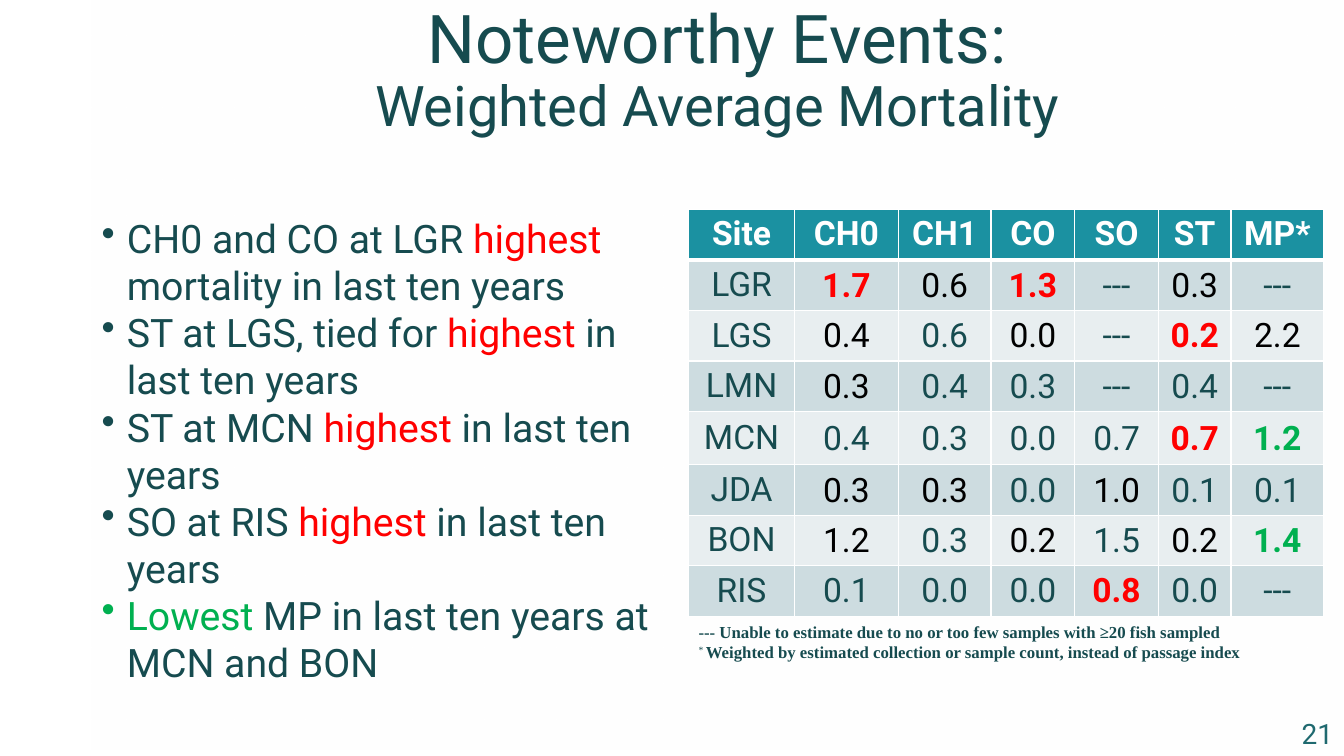
from dataclasses import dataclass

from lxml.etree import SubElement
from pptx import Presentation
from pptx.dml.color import RGBColor
from pptx.enum.shapes import MSO_SHAPE as Shape
from pptx.enum.text import MSO_ANCHOR as Anchor, PP_ALIGN as Align
from pptx.oxml import parse_xml
from pptx.oxml.ns import nsdecls, qn
from pptx.slide import Slide
from pptx.table import _Cell as Cell
from pptx.text.text import Font, TextFrame, _Paragraph as Paragraph
from pptx.util import Inches, Pt


@dataclass(frozen=True)
class Theme:
    """Colours, fonts and type sizes of the slide."""
    text: str = "164B4F"
    number: str = "1F696F"
    high: str = "FF0000"
    low: str = "00B050"
    black: str = "000000"
    white: str = "FFFFFF"
    header: str = "1B91A1"
    bands: tuple[str, str] = ("CDDCE0", "E8EEF0")
    font: str = "Roboto"
    note_font: str = "Times New Roman"
    title_size: int = 48
    subtitle_size: int = 40
    body_size: int = 28
    table_size: int = 24
    number_size: int = 20
    note_size: int = 12


@dataclass(frozen=True)
class Box:
    """Place and size in inches."""
    left: float
    top: float
    width: float
    height: float

    def lengths(self) -> tuple[Inches, ...]:
        """Return the four lengths for a shape call."""
        return tuple(map(Inches, (self.left, self.top, self.width, self.height)))


@dataclass(frozen=True)
class Bullet:
    """A bullet with one highlighted word."""
    before: str
    word: str
    after: str
    colour: str


@dataclass(frozen=True)
class SiteRow:
    """Values of one site, with one tone letter per value."""
    site: str
    values: str
    tones: str


THEME = Theme()
TONES = {"t": THEME.text, "k": THEME.black, "h": THEME.high, "l": THEME.low}
PANEL = Box(0.91, 0, 12.41, 7.5)
TITLE = Box(0.91, 0, 12.41, 1.42)
BODY = Box(0.91, 2.08, 5.92, 5.17)
TABLE = Box(6.83, 2.08, 6.31, 4.03)
NOTES = Box(6.83, 6.12, 6.31, 0.5)
NUMBER = Box(11.91, 7.07, 1.41, 0.4)
BULLETS = [
    Bullet("CH0 and CO at LGR ", "highest", " mortality in last ten years", THEME.high),
    Bullet("ST at LGS, tied for ", "highest", " in last ten years", THEME.high),
    Bullet("ST at MCN ", "highest", " in last ten years", THEME.high),
    Bullet("SO at RIS ", "highest", " in last ten years", THEME.high),
    Bullet("", "Lowest", " MP in last ten years at MCN and BON", THEME.low),
]
HEADINGS = "Site CH0 CH1 CO SO ST MP*".split()
SITES = [
    SiteRow("LGR", "1.7 0.6 1.3 --- 0.3 ---", "hkhtkt"),
    SiteRow("LGS", "0.4 0.6 0.0 --- 0.2 2.2", "ktkthk"),
    SiteRow("LMN", "0.3 0.4 0.3 --- 0.4 ---", "kttttt"),
    SiteRow("MCN", "0.4 0.3 0.0 0.7 0.7 1.2", "tttthl"),
    SiteRow("JDA", "0.3 0.3 0.0 1.0 0.1 0.1", "kktktt"),
    SiteRow("BON", "1.2 0.3 0.2 1.5 0.2 1.4", "ktktkl"),
    SiteRow("RIS", "0.1 0.0 0.0 0.8 0.0 ---", "ttthtt"),
]
COLUMN_WIDTHS = [1.05, 1.03, 0.92, 0.83, 0.83, 0.72, 0.92]
ROW_HEIGHTS = [0.45, 0.5, 0.5, 0.5, 0.53, 0.5, 0.5, 0.5]


def style(font: Font, size: int, colour: str = THEME.text,
          name: str = THEME.font, bold: bool = False) -> None:
    """Set the look of a font."""
    font.size, font.name, font.bold = Pt(size), name, bold
    font.color.rgb = RGBColor.from_string(colour)


def hang(paragraph: Paragraph, bullet: str = "") -> None:
    """Give a paragraph a hanging indent and an optional bullet."""
    properties = paragraph._p.get_or_add_pPr()
    properties.set("marL", str(Inches(0.25)))
    properties.set("indent", str(-Inches(0.25)))
    if bullet:
        SubElement(properties, qn("a:buChar"), char=bullet)


def add_text(slide: Slide, box: Box, anchor: Anchor = Anchor.TOP) -> TextFrame:
    """Add a wrapping text box and return its frame."""
    frame = slide.shapes.add_textbox(*box.lengths()).text_frame
    frame.word_wrap, frame.vertical_anchor = True, anchor
    return frame


def add_panel(slide: Slide) -> None:
    """Add the fading white panel behind the content."""
    panel = slide.shapes.add_shape(Shape.RECTANGLE, *PANEL.lengths())
    panel.shadow.inherit = False
    panel.line.fill.background()
    panel.fill.gradient()
    panel.fill.gradient_angle = 270
    for stop, alpha in zip(panel.fill.gradient_stops, (60000, 0)):
        stop.color.rgb = RGBColor.from_string(THEME.white)
    for colour, alpha in zip(panel._element.spPr.iter(qn("a:srgbClr")), (60000, 0)):
        SubElement(colour, qn("a:alpha"), val=str(alpha))


def add_title(slide: Slide) -> None:
    """Add the two-line title."""
    paragraph = add_text(slide, TITLE, Anchor.BOTTOM).paragraphs[0]
    paragraph.alignment, paragraph.line_spacing = Align.CENTER, 0.9
    heading = paragraph.add_run()
    heading.text = "Noteworthy Events:"
    style(heading.font, THEME.title_size)
    paragraph.add_line_break()
    subtitle = paragraph.add_run()
    subtitle.text = "Weighted Average Mortality"
    style(subtitle.font, THEME.subtitle_size)


def add_bullets(slide: Slide) -> None:
    """Add the list of events."""
    frame = add_text(slide, BODY)
    for index, bullet in enumerate(BULLETS):
        paragraph = frame.add_paragraph() if index else frame.paragraphs[0]
        hang(paragraph, "•")
        parts = ((bullet.before, THEME.text), (bullet.word, bullet.colour),
                 (bullet.after, THEME.text))
        for text, colour in parts:
            if text:
                run = paragraph.add_run()
                run.text = text
                style(run.font, THEME.body_size, colour)


def fill_cell(cell: Cell, text: str, colour: str, fill: str, bold: bool,
              top: int = 1, bottom: int = 1) -> None:
    """Write a centred cell with its fill and white borders."""
    paragraph = cell.text_frame.paragraphs[0]
    paragraph.text, paragraph.alignment = text, Align.CENTER
    style(paragraph.font, THEME.table_size, colour, bold=bold)
    cell.fill.solid()
    cell.fill.fore_color.rgb = RGBColor.from_string(fill)
    properties = cell._tc.get_or_add_tcPr()
    for index, (side, width) in enumerate(zip("LRTB", (1, 1, top, bottom))):
        properties.insert(index, parse_xml(
            f'<a:ln{side} {nsdecls("a")} w="{Pt(width)}"><a:solidFill>'
            f'<a:srgbClr val="{THEME.white}"/></a:solidFill></a:ln{side}>'))


def add_mortality_table(slide: Slide) -> None:
    """Add the table of mortality by site."""
    table = slide.shapes.add_table(len(SITES) + 1, len(HEADINGS), *TABLE.lengths()).table
    for column, width in zip(table.columns, COLUMN_WIDTHS):
        column.width = Inches(width)
    for row, height in zip(table.rows, ROW_HEIGHTS):
        row.height = Inches(height)
    for column, heading in enumerate(HEADINGS):
        fill_cell(table.cell(0, column), heading, THEME.white, THEME.header, True, bottom=3)
    for row, site in enumerate(SITES, 1):
        entries = zip([site.site, *site.values.split()], "t" + site.tones)
        for column, (text, tone) in enumerate(entries):
            cell = table.cell(row, column)
            cell.vertical_anchor = Anchor.MIDDLE
            if column:
                cell.margin_left = cell.margin_right = cell.margin_top = Inches(0.01)
                cell.margin_bottom = 0
            fill_cell(cell, text, TONES[tone], THEME.bands[(row - 1) % 2],
                      tone in "hl", top=3 if row == 1 else 1)


def add_notes(slide: Slide) -> None:
    """Add the two notes below the table."""
    frame = add_text(slide, NOTES)
    missing, weighted = frame.paragraphs[0], frame.add_paragraph()
    missing.text = "--- Unable to estimate due to no or too few samples with ≥20 fish sampled"
    hang(missing)
    style(missing.font, THEME.note_size, name=THEME.note_font, bold=True)
    hang(weighted)
    star, note = weighted.add_run(), weighted.add_run()
    star.text = "* "
    note.text = "Weighted by estimated collection or sample count, instead of passage index"
    style(star.font, THEME.note_size, name=THEME.note_font)
    star.font._element.set("baseline", "30000")
    style(note.font, THEME.note_size, name=THEME.note_font, bold=True)


def add_number(slide: Slide) -> None:
    """Add the slide number."""
    paragraph = add_text(slide, NUMBER, Anchor.MIDDLE).paragraphs[0]
    paragraph.text, paragraph.alignment = "21", Align.RIGHT
    style(paragraph.font, THEME.number_size, THEME.number)


def main() -> None:
    """Build the slide and save it."""
    presentation = Presentation()
    presentation.slide_width, presentation.slide_height = Inches(13.33), Inches(7.5)
    slide = presentation.slides.add_slide(presentation.slide_layouts[6])
    for add_part in (add_panel, add_title, add_bullets, add_number,
                     add_mortality_table, add_notes):
        add_part(slide)
    presentation.save("out.pptx")


if __name__ == "__main__":
    main()
